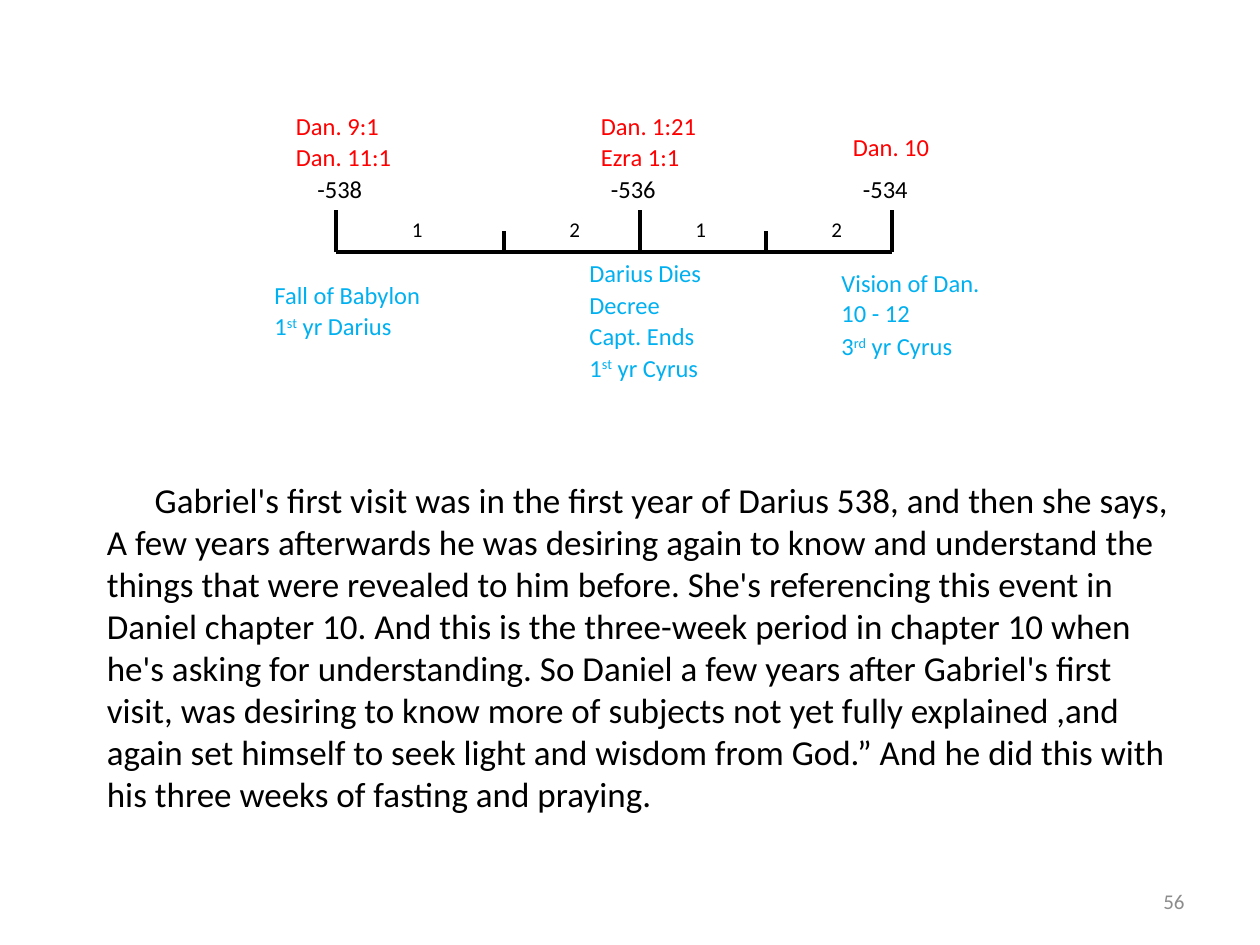
import pptx
import pptx.util
import pptx.dml.color
import pptx.enum.shapes
import pptx.enum.text
from pptx.util import Inches, Pt

BLACK, RED, BLUE, GRAY = "000000", "FF0000", "00B0F0", "8C8C8C"
ALIGN = pptx.enum.text.PP_ALIGN
ANCHOR = pptx.enum.text.MSO_ANCHOR

# Content: "^" marks the start and end of a superscript
BODY = (
    "Gabriel's first visit was in the first year of Darius 538, and then she says, "
    "A few years afterwards he was desiring again to know and understand the things "
    "that were revealed to him before. She's referencing this event in Daniel chapter 10. "
    "And this is the three-week period in chapter 10 when he's asking for understanding. "
    "So Daniel a few years after Gabriel's first visit, was desiring to know more of "
    "subjects not yet fully explained ,and again set himself to seek light and wisdom "
    "from God.” And he did this with his three weeks of fasting and praying."
)
PAGE = "56"

# Timeline: axis height, and the x and top of each tick
AXIS = 2
TICKS = [(2.67, 1.67), (4, 1.83), (5.08, 1.67), (6.08, 1.83), (7.08, 1.67)]

# Columns of labels: left, first top, colour, [(text, width)]
ROW_STEP = 0.25
COLUMNS = [
    (2.25, 0.83, RED, [("Dan. 9:1", 2.58), ("Dan. 11:1", 1.67)]),
    (4.67, 0.83, RED, [("Dan. 1:21", 1.5), ("Ezra 1:1", 1.25)]),
    (6.67, 1, RED, [("Dan. 10", 1.5)]),
    (2.42, 1.33, BLACK, [("-538", 1.75)]),
    (4.75, 1.33, BLACK, [("-536", 1.83)]),
    (6.75, 1.33, BLACK, [("-534", 1.75)]),
    (2.08, 2.17, BLUE, [("Fall of Babylon", 1.42), ("1^st^ yr Darius", 1.58)]),
    (4.58, 2, BLUE, [("Darius Dies", 2.17), ("Decree", 1.83),
                     ("Capt. Ends", 1.67), ("1^st^ yr Cyrus", 2)]),
    (6.58, 2.08, BLUE, [("Vision of Dan. 10 - 12", 1.42)]),
    (6.58, 2.58, BLUE, [("3^rd^ yr Cyrus", 1.67)]),
]

# Year counts between ticks: text, left, width
COUNTS = [("1", 3.17, 2), ("2", 4.42, 0.92), ("1", 5.42, 1.5), ("2", 6.5, 1.67)]


def rgb(color):
    return pptx.dml.color.RGBColor.from_string(color)


def add_text(text, x, y, w, h, size, color):
    tf = slide.shapes.add_textbox(Inches(x), Inches(y), Inches(w), Inches(h)).text_frame
    tf.word_wrap = True
    p = tf.paragraphs[0]
    p.font.name, p.font.size = "Calibri", Pt(size)
    p.font.color.rgb = rgb(color)
    for i, part in enumerate(text.split("^")):
        r = p.add_run()
        r.text = part
        r.font.name, r.font.size = "Calibri", Pt(size)
        r.font.color.rgb = rgb(color)
        if i % 2:
            r._r.get_or_add_rPr().set("baseline", "30000")
    return tf


def add_line(x1, y1, x2, y2):
    line = slide.shapes.add_connector(
        pptx.enum.shapes.MSO_CONNECTOR.STRAIGHT,
        Inches(x1), Inches(y1), Inches(x2), Inches(y2))
    line.line.color.rgb = rgb(BLACK)
    line.line.width = Pt(2.25)
    line._element.spPr.append(pptx.oxml.parse_xml(
        '<a:effectLst xmlns:a="http://schemas.openxmlformats.org/drawingml/2006/main"/>'))


prs = pptx.Presentation()
prs.slide_width, prs.slide_height = Inches(10), Inches(7.5)
slide = prs.slides.add_slide(prs.slide_layouts[6])

# Body paragraph with a first-line indent
tf = add_text(BODY, 0.75, 3.75, 8.67, 3.13, 20, BLACK)
tf.paragraphs[0]._p.get_or_add_pPr().set("indent", str(Inches(0.38)))

# Page number
tf = add_text(PAGE, 7.17, 6.95, 2.33, 0.4, 12, GRAY)
tf.vertical_anchor = ANCHOR.MIDDLE
tf.paragraphs[0].alignment = ALIGN.RIGHT

# Timeline axis and ticks
add_line(TICKS[0][0], AXIS, TICKS[-1][0], AXIS)
for x, top in TICKS:
    add_line(x, AXIS, x, top)

# Labels
for text, x, w in COUNTS:
    add_text(text, x, 1.67, w, 0.3, 12, BLACK)
for x, top, color, rows in COLUMNS:
    for i, (text, w) in enumerate(rows):
        add_text(text, x, top + i * ROW_STEP, w, 0.34, 14, color)

prs.save("out.pptx")
